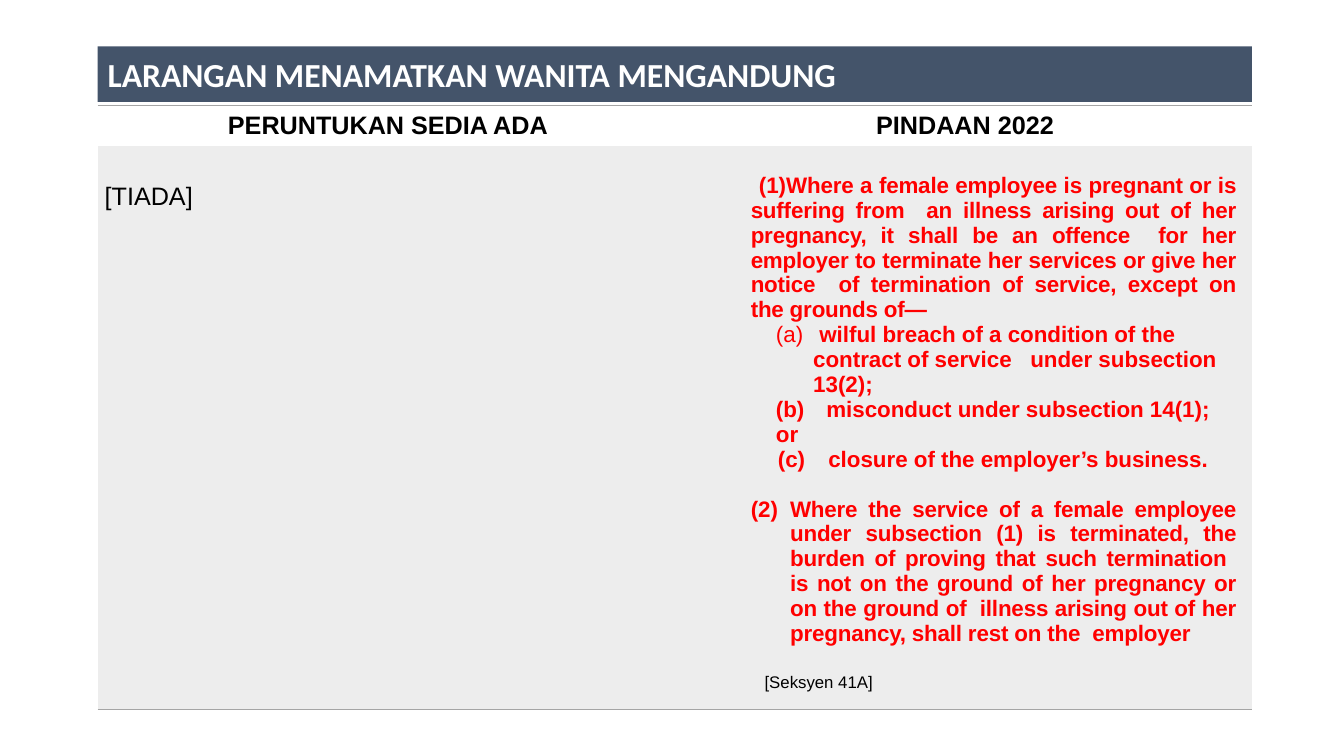
import pptx
import pptx.util
import pptx.dml.color
import pptx.enum.shapes
import pptx.enum.text
from lxml import etree

Pt = pptx.util.Pt
RGB = pptx.dml.color.RGBColor
ALIGN = pptx.enum.text.PP_ALIGN
MIDDLE = pptx.enum.text.MSO_ANCHOR.MIDDLE

NAVY = RGB(0x44, 0x54, 0x6A)
WHITE = RGB(0xFF, 0xFF, 0xFF)
BLACK = RGB(0, 0, 0)
RED = RGB(0xFF, 0, 0)
PALE = RGB(0xED, 0xED, 0xED)
RULE = RGB(0xA5, 0xA5, 0xA5)

TITLE = "LARANGAN MENAMATKAN WANITA MENGANDUNG"
HEADERS = ["PERUNTUKAN SEDIA ADA", "PINDAAN 2022"]
EXISTING = [dict(spans=[("[TIADA]", False)], size=18, color=BLACK, align=ALIGN.JUSTIFY)]
CLAUSE = dict(size=16, color=RED)
AMENDMENT = [
    dict(CLAUSE, align=ALIGN.JUSTIFY, left=46.8, first=5.8, number="arabicParenBoth",
         tab=79.9, tracking=-10, spans=[(
             "Where a female employee is pregnant or is suffering from  an illness "
             "arising out of her pregnancy, it shall be an offence  for her employer to "
             "terminate her services or give her notice  of termination of service, "
             "except on the grounds of—", True)]),
    dict(CLAUSE, left=91.4, first=-26.6, number="alphaLcParenBoth", tab=95.8, spans=[
        ("\t", False),
        ("wilful breach of a condition of the contract of service   under "
         "subsection 13(2);", True)]),
    dict(CLAUSE, left=64.8, tab=103,
         spans=[("(b)\tmisconduct under subsection 14(1); or", True)]),
    dict(CLAUSE, left=66.2, tab=104.4,
         spans=[("(c)\tclosure of the employer’s business.", True)]),
    dict(CLAUSE, align=ALIGN.JUSTIFY, left=74.9, first=-28.1, number="arabicParenBoth",
         start=2, tab=74.9, before=17.9, tracking=-10, spans=[(
             "Where the service of a female employee under subsection (1) is "
             "terminated, the burden of proving that such termination  is not on the "
             "ground of her pregnancy or on the ground of  illness arising out of her "
             "pregnancy, shall rest on the  employer", True)]),
    dict(spans=[("[Seksyen 41A]", False)], size=12, color=BLACK, align=ALIGN.JUSTIFY,
         left=56.7, before=19.4),
]

LEFT, WIDTH = 69.8, 824.4
BANNER_TOP, BANNER_HEIGHT = 33.1, 39.6
TABLE_TOP = 75.6
COLUMNS = [414.7, 409.7]
ROWS = [28.8, 402.5]
NO_STYLE = "{2D5ABB26-0587-4C30-8999-92F81FD0307C}"
MAIN = "http://schemas.openxmlformats.org/drawingml/2006/main"


def add_xml(parent, tag, **attributes):
    child = etree.SubElement(parent, f"{{{MAIN}}}{tag}")
    for name, value in attributes.items():
        child.set(name, str(value))
    return child


def style(span, size, color, bold, font="Arial"):
    span.font.size = Pt(size)
    span.font.name = font
    span.font.bold = bold
    span.font.color.rgb = color


def border(cell, tag):
    """Draw a one-point grey rule; borders must come before the cell's fill."""
    properties = cell._tc.get_or_add_tcPr()
    line = add_xml(properties, tag, w=Pt(1))
    add_xml(add_xml(line, "solidFill"), "srgbClr", val=RULE)
    properties.insert(0, line)


def write_paragraph(para, spans, size, color, align=ALIGN.LEFT, left=0, first=0,
                    number=None, start=1, tab=None, before=0, tracking=0):
    para.alignment = align
    para.space_before = Pt(before)
    properties = para._p.get_or_add_pPr()
    properties.set("marL", str(Pt(left)))
    properties.set("indent", str(Pt(first)))
    if number:
        add_xml(add_xml(properties, "buClr"), "srgbClr", val=color)
        add_xml(properties, "buAutoNum", type=number, startAt=start)
    if tab:
        add_xml(add_xml(properties, "tabLst"), "tab", pos=Pt(tab), algn="l")
    for text, bold in spans:
        span = para.add_run()
        span.text = text
        style(span, size, color, bold)
        if tracking:
            span.font._element.set("spc", str(tracking))


def fill_cell(cell, paragraphs, top, right):
    cell.margin_left, cell.margin_right = Pt(5), Pt(right)
    cell.margin_top, cell.margin_bottom = Pt(top), 0
    cell.fill.solid()
    cell.fill.fore_color.rgb = PALE
    border(cell, "lnB")
    for index, paragraph in enumerate(paragraphs):
        frame = cell.text_frame
        para = frame.add_paragraph() if index else frame.paragraphs[0]
        write_paragraph(para, **paragraph)


def add_comparison(page):
    holder = page.shapes.add_table(2, 2, Pt(LEFT), Pt(TABLE_TOP), Pt(WIDTH), Pt(sum(ROWS)))
    table = holder.table
    table.first_row = table.horz_banding = False
    next(holder.element.iter(f"{{{MAIN}}}tableStyleId")).text = NO_STYLE
    for column, width in zip(table.columns, COLUMNS):
        column.width = Pt(width)
    for row, height in zip(table.rows, ROWS):
        row.height = Pt(height)
    for index, header in enumerate(HEADERS):
        cell = table.cell(0, index)
        cell.margin_left = cell.margin_right = Pt(5.8)
        cell.margin_top = cell.margin_bottom = 0
        cell.vertical_anchor = MIDDLE
        cell.fill.background()
        border(cell, "lnT")
        para = cell.text_frame.paragraphs[0]
        para.text = header
        para.alignment = ALIGN.CENTER
        style(para.runs[0], 18, BLACK, True)
    fill_cell(table.cell(1, 0), EXISTING, top=26.1, right=5)
    fill_cell(table.cell(1, 1), AMENDMENT, top=19.4, right=10.7)


def add_banner(page):
    banner = page.shapes.add_shape(pptx.enum.shapes.MSO_SHAPE.RECTANGLE, Pt(LEFT),
                                   Pt(BANNER_TOP), Pt(WIDTH), Pt(BANNER_HEIGHT))
    banner.shadow.inherit = False
    banner.fill.solid()
    banner.fill.fore_color.rgb = NAVY
    banner.line.fill.background()
    banner.text_frame.vertical_anchor = MIDDLE
    para = banner.text_frame.paragraphs[0]
    para.text = TITLE
    para.alignment = ALIGN.LEFT
    style(para.runs[0], 24, WHITE, True, "Calibri")


def main():
    deck = pptx.Presentation()
    deck.slide_width, deck.slide_height = Pt(960), Pt(540)
    page = deck.slides.add_slide(deck.slide_layouts[6])
    add_comparison(page)
    add_banner(page)
    deck.save("out.pptx")


if __name__ == "__main__":
    main()
